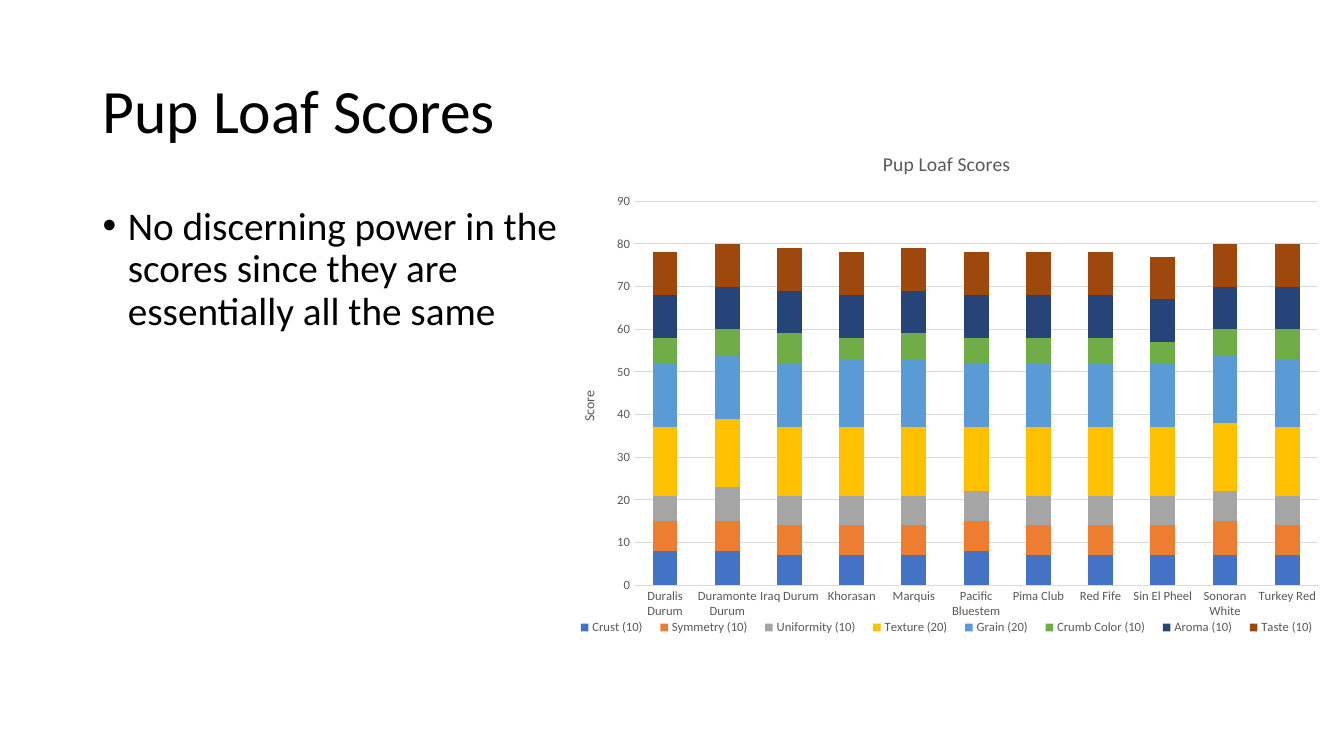
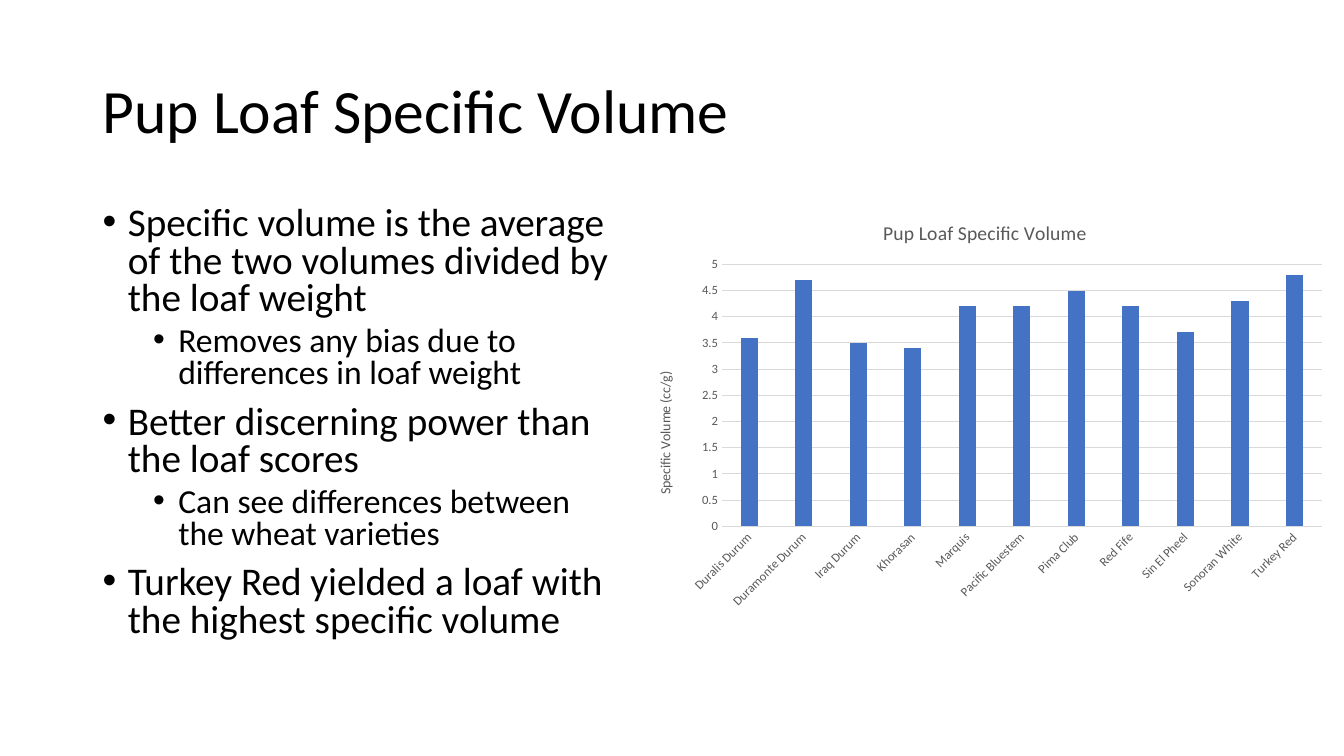
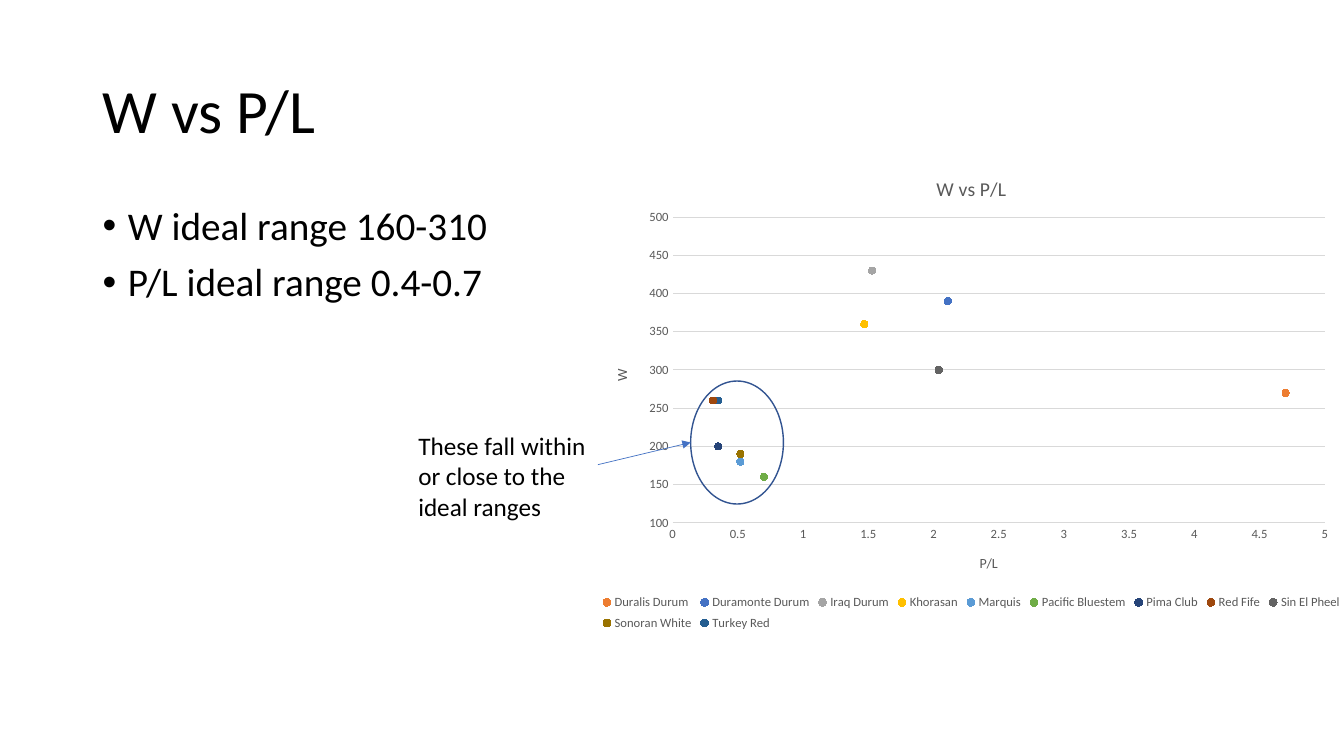
from lxml.etree import SubElement
from pptx import Presentation
from pptx.chart.data import CategoryChartData, XyChartData
from pptx.dml.color import RGBColor
from pptx.enum.chart import (XL_CHART_TYPE as ChartType, XL_LEGEND_POSITION as LegendPos,
                             XL_MARKER_STYLE as Marker, XL_TICK_MARK as Tick)
from pptx.enum.shapes import MSO_CONNECTOR as Connector, MSO_SHAPE as Shape
from pptx.enum.text import MSO_ANCHOR as Anchor
from pptx.oxml import parse_xml
from pptx.oxml.ns import nsdecls, qn
from pptx.util import Inches, Pt

FONT = "Calibri"
COLORS = {
    "text": "000000", "label": "595959", "grid": "D9D9D9", "outline": "325491",
    "blue": "4472C4", "orange": "ED7D31", "grey": "A5A5A5", "gold": "FFC000",
    "sky": "5B9BD5", "green": "70AD47", "navy": "264478", "rust": "9E480E",
    "slate": "636363", "olive": "997300", "teal": "255E91",
}
SCORE_COLORS = ["blue", "orange", "grey", "gold", "sky", "green", "navy", "rust"]
WHEAT_COLORS = ["orange", "blue", "grey", "gold", "sky", "green", "navy", "rust",
                "slate", "olive", "teal"]

# Data
WHEATS = ["Duralis Durum", "Duramonte Durum", "Iraq Durum", "Khorasan", "Marquis",
          "Pacific Bluestem", "Pima Club", "Red Fife", "Sin El Pheel",
          "Sonoran White", "Turkey Red"]
SCORES = {
    "Crust (10)": [8, 8, 7, 7, 7, 8, 7, 7, 7, 7, 7],
    "Symmetry (10)": [7, 7, 7, 7, 7, 7, 7, 7, 7, 8, 7],
    "Uniformity (10)": [6, 8, 7, 7, 7, 7, 7, 7, 7, 7, 7],
    "Texture (20)": [16, 16, 16, 16, 16, 15, 16, 16, 16, 16, 16],
    "Grain (20)": [15, 15, 15, 16, 16, 15, 15, 15, 15, 16, 16],
    "Crumb Color (10)": [6, 6, 7, 5, 6, 6, 6, 6, 5, 6, 7],
    "Aroma (10)": [10] * 11,
    "Taste (10)": [10] * 11,
}
VOLUMES = [3.6, 4.7, 3.5, 3.4, 4.2, 4.2, 4.5, 4.2, 3.7, 4.3, 4.8]
P_L = [4.7, 2.11, 1.53, 1.47, 0.52, 0.7, 0.35, 0.31, 2.04, 0.52, 0.35]
W = [270, 390, 430, 360, 180, 160, 200, 260, 300, 190, 260]


def rgb(name):
    return RGBColor.from_string(COLORS[name])


def set_font(font, size, color="text"):
    font.name, font.size, font.bold = FONT, Pt(size), False
    font.color.rgb = rgb(color)


# Text
def add_text(slide, box, paragraphs, size=18, anchor=Anchor.TOP, spacing=None, bullets=False):
    """Each paragraph is a (level, text) pair."""
    frame = slide.shapes.add_textbox(*map(Inches, box)).text_frame
    frame.word_wrap = True
    frame.vertical_anchor = anchor
    for number, (level, text) in enumerate(paragraphs):
        paragraph = frame.paragraphs[0] if number == 0 else frame.add_paragraph()
        paragraph.line_spacing = spacing
        run = paragraph.add_run()
        run.text = text
        set_font(run.font, size - 4 * level)
        if bullets:
            paragraph.level = level
            paragraph.space_before = Pt(5 if level else 10)
            add_bullet(paragraph, 0.25 + 0.5 * level)


def add_bullet(paragraph, indent):
    props = paragraph._p.get_or_add_pPr()
    props.set("marL", str(Inches(indent)))
    props.set("indent", str(-Inches(0.25)))
    SubElement(props, qn("a:buFont")).set("typeface", "Arial")
    SubElement(props, qn("a:buChar")).set("char", "•")


def add_content_slide(deck, title, points, body_box, spacing=0.9):
    slide = deck.slides.add_slide(deck.slide_layouts[6])
    add_text(slide, (0.92, 0.4, 11.5, 1.45), [(0, title)], size=44,
             anchor=Anchor.MIDDLE, spacing=0.9)
    add_text(slide, body_box, points, size=28, spacing=spacing, bullets=True)
    return slide


# Charts
def add_chart(slide, kind, box, data, title, legend=False):
    chart = slide.shapes.add_chart(kind, *map(Inches, box), data).chart
    set_font(chart.font, 10)
    chart.has_title = True
    write_title(chart.chart_title, title, 14)
    chart.has_legend = legend
    if legend:
        chart.legend.position = LegendPos.BOTTOM
        chart.legend.include_in_layout = False
        set_font(chart.legend.font, 9, "label")
    return chart


def write_title(title, text, size, rotation=0):
    frame = title.text_frame
    frame.text = text
    set_font(frame.paragraphs[0].runs[0].font, size, "label")
    frame._txBody.bodyPr.set("rot", str(rotation * 60000))


def style_axis(axis, title=None, scale=None, vertical=False):
    axis.major_tick_mark = axis.minor_tick_mark = Tick.NONE
    set_font(axis.tick_labels.font, 9, "label")
    axis.has_major_gridlines = vertical
    if vertical:
        axis.format.line.fill.background()
        style_line(axis.major_gridlines.format.line, "grid", 0.75)
    else:
        style_line(axis.format.line, "grid", 0.75)
    if title:
        write_title(axis.axis_title, title, 10, -90 if vertical else 0)
    if scale:
        axis.minimum_scale, axis.maximum_scale, axis.major_unit = scale


def style_line(line, color, width):
    line.color.rgb = rgb(color)
    line.width = Pt(width)


def add_columns(slide, kind, box, series, title, value_title, scale, gap, overlap):
    data = CategoryChartData()
    data.categories = WHEATS
    for name, values in series.items():
        data.add_series(name, values)
    chart = add_chart(slide, kind, box, data, title, legend=len(series) > 1)
    style_axis(chart.category_axis)
    style_axis(chart.value_axis, value_title, scale, vertical=True)
    plot = chart.plots[0]
    plot.vary_by_categories = False
    plot.gap_width, plot.overlap = gap, overlap
    for column, color in zip(plot.series, SCORE_COLORS):
        column.format.fill.solid()
        column.format.fill.fore_color.rgb = rgb(color)
    return chart


def add_scatter(slide, box, title):
    data = XyChartData()
    for wheat, x, y in zip(WHEATS, P_L, W):
        data.add_series(wheat).add_data_point(x, y)
    chart = add_chart(slide, ChartType.XY_SCATTER, box, data, title, legend=True)
    style_axis(chart.category_axis, "P/L", (0, 5, 0.5))
    style_axis(chart.value_axis, "W", (100, 500, 50), vertical=True)
    chart.plots[0].vary_by_categories = False
    for wheat, color in zip(chart.plots[0].series, WHEAT_COLORS):
        wheat.format.line.fill.background()
        wheat.marker.style, wheat.marker.size = Marker.CIRCLE, 5
        wheat.marker.format.fill.solid()
        wheat.marker.format.fill.fore_color.rgb = rgb(color)
        style_line(wheat.marker.format.line, color, 0.75)
    return chart


def place_plot(chart, *area):
    place_part(chart._chartSpace.chart.plotArea, 0, area, '<c:layoutTarget val="inner"/>')


def place_legend(chart, *area):
    # The layout follows the legend position
    place_part(chart.legend._element, 1, area)


def place_part(part, index, area, target=""):
    """Place a chart part by its left, top, width and height as shares of the chart."""
    for old in part.findall(qn("c:layout")):
        part.remove(old)
    modes = "".join(f'<c:{side}Mode val="edge"/>' for side in "xy")
    sizes = "".join(f'<c:{side} val="{share}"/>' for side, share in zip("xywh", area))
    part.insert(index, parse_xml(
        f'<c:layout {nsdecls("c")}><c:manualLayout>{target}{modes}{sizes}'
        '</c:manualLayout></c:layout>'))


# Annotations
def add_ring(slide, box):
    ring = slide.shapes.add_shape(Shape.OVAL, *map(Inches, box))
    ring.shadow.inherit = False
    ring.fill.background()
    style_line(ring.line, "outline", 1)


def add_arrow(slide, start, end):
    arrow = slide.shapes.add_connector(Connector.STRAIGHT, *map(Inches, start + end))
    style_line(arrow.line, "blue", 0.5)
    SubElement(arrow.line._get_or_add_ln(), qn("a:tailEnd")).set("type", "triangle")
    SubElement(arrow._element.spPr, qn("a:effectLst"))


# Slides
def scores_slide(deck):
    slide = add_content_slide(deck, "Pup Loaf Scores", [
        (0, "No discerning power in the scores since they are essentially all the same"),
    ], (0.92, 2, 4.85, 4.86))
    chart = add_columns(slide, ChartType.COLUMN_STACKED, (5.55, 1.3, 7.68, 5.24), SCORES,
                        "Pup Loaf Scores", "Score", (0, 90, 10), gap=150, overlap=100)
    place_plot(chart, 0.096, 0.133, 0.884, 0.727)
    place_legend(chart, 0.01, 0.92, 0.98, 0.04)


def volume_slide(deck):
    slide = add_content_slide(deck, "Pup Loaf Specific Volume", [
        (0, "Specific volume is the average of the two volumes divided by the loaf weight"),
        (1, "Removes any bias due to differences in loaf weight"),
        (0, "Better discerning power than the loaf scores"),
        (1, "Can see differences between the wheat varieties"),
        (0, "Turkey Red yielded a loaf with the highest specific volume"),
    ], (0.92, 2, 5.3, 4.76), spacing=0.8)
    chart = add_columns(slide, ChartType.COLUMN_CLUSTERED, (6.29, 2, 6.96, 4.13),
                        {"Series 1": VOLUMES}, "Pup Loaf Specific Volume",
                        "Specific Volume (cc/g)", (0, 5, 0.5), gap=219, overlap=-27)
    place_plot(chart, 0.125, 0.151, 0.855, 0.629)
    # Slanted wheat names
    label_props = chart.category_axis._element.find(qn("c:txPr")).find(qn("a:bodyPr"))
    label_props.set("rot", str(-45 * 60000))


def ratio_slide(deck):
    slide = add_content_slide(deck, "W vs P/L", [
        (0, "W ideal range 160-310"),
        (0, "P/L ideal range 0.4-0.7"),
    ], (0.92, 2, 5.42, 1.18))
    chart = add_scatter(slide, (5.93, 1.55, 7.41, 4.91), "W vs P/L")
    place_plot(chart, 0.1, 0.123, 0.873, 0.618)
    place_legend(chart, 0, 0.875, 1, 0.095)
    add_ring(slide, (6.85, 3.78, 0.92, 1.22))
    add_text(slide, (4.05, 4.22, 1.88, 1.01),
             [(0, "These fall within or close to the ideal ranges")])
    add_arrow(slide, (5.93, 4.61), (6.85, 4.39))


def main():
    deck = Presentation()
    deck.slide_width, deck.slide_height = Inches(13.33), Inches(7.5)
    scores_slide(deck)
    volume_slide(deck)
    ratio_slide(deck)
    deck.save("out.pptx")


if __name__ == "__main__":
    main()
